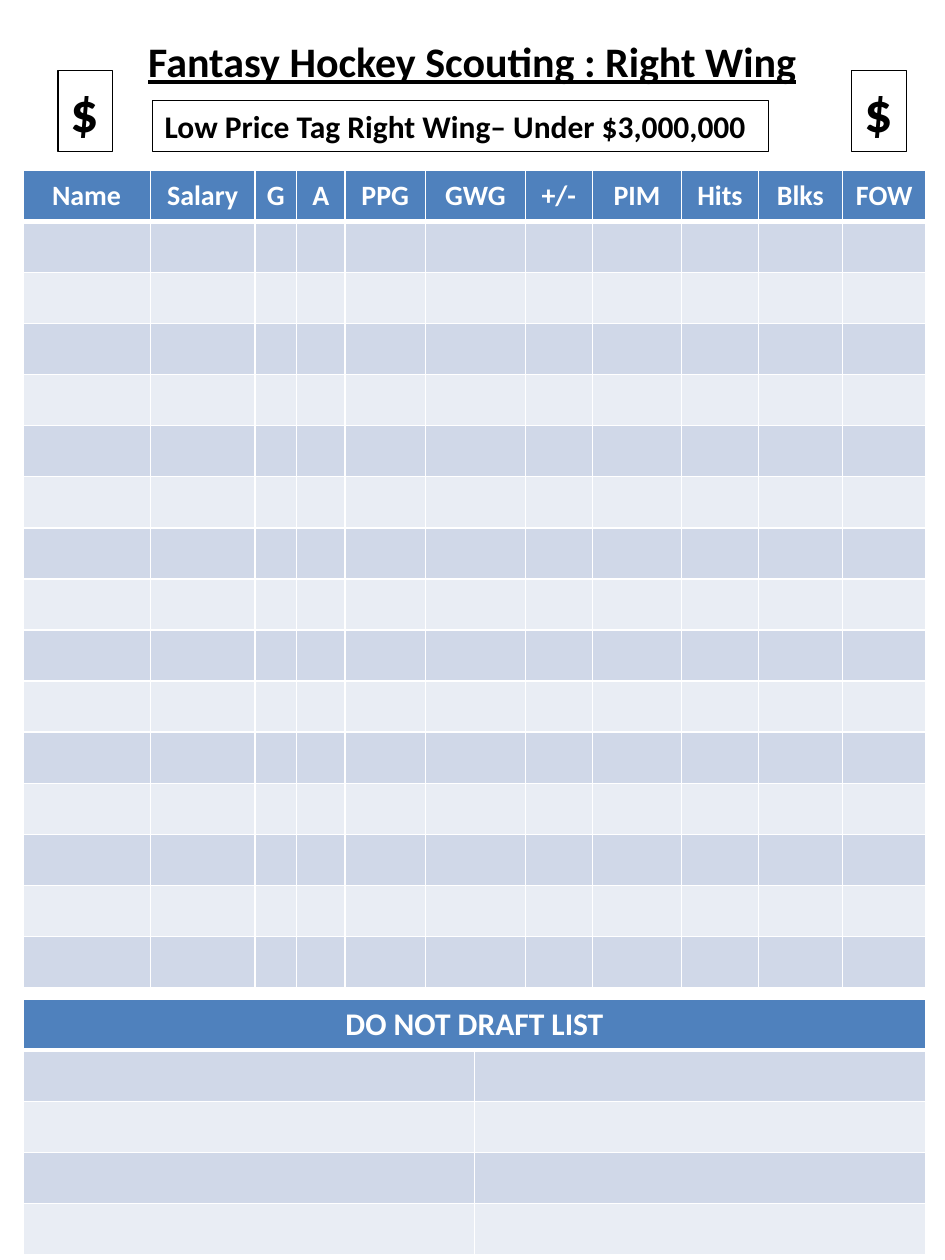
from lxml import etree
from pptx import Presentation, util as u
from pptx.dml.color import RGBColor
from pptx.enum import text
from pptx.oxml import ns

COLORS = {"ink": "000000", "white": "FFFFFF", "header": "4F81BD",
          "dark_band": "D0D8E8", "light_band": "E9EDF4"}
STATS = {"Name": 2.57, "Salary": 2.11, "G": 0.84, "A": 0.97, "PPG": 1.63, "GWG": 2.01,
         "+/-": 1.35, "PIM": 1.8, "Hits": 1.55, "Blks": 1.69, "FOW": 1.69}
ROW_HEIGHT = 1.03


def color(name):
    """Return the named palette colour."""
    return RGBColor.from_string(COLORS[name])


def write(frame, words, size=18, ink="ink", align=text.PP_ALIGN.LEFT, underline=None,
          anchor=text.MSO_ANCHOR.TOP, wrap=True):
    """Put one bold formatted line into a text frame."""
    frame.word_wrap = wrap
    frame.auto_size = text.MSO_AUTO_SIZE.NONE
    frame.vertical_anchor = anchor
    line = frame.paragraphs[0]
    line.alignment = align
    run = line.add_run()
    run.text = words
    font = run.font
    font.name, font.size, font.bold, font.underline = "Calibri", u.Pt(size), True, underline
    font.color.rgb = color(ink)


def style_cell(cell, fill, bottom=1):
    """Fill a cell and give it white borders."""
    properties = cell._tc.get_or_add_tcPr()
    for side, width in (("L", 1), ("R", 1), ("T", 1), ("B", bottom)):
        border = etree.SubElement(properties, ns.qn(f"a:ln{side}"), w=str(u.Pt(width)))
        solid = etree.SubElement(border, ns.qn("a:solidFill"))
        etree.SubElement(solid, ns.qn("a:srgbClr"), val=COLORS["white"])
    cell.fill.solid()
    cell.fill.fore_color.rgb = color(fill)


def add_banded_table(slide, left, top, widths, row_count):
    """Add a table with a header row and alternating bands."""
    table = slide.shapes.add_table(row_count, len(widths), u.Cm(left), u.Cm(top),
                                   u.Cm(sum(widths)), u.Cm(ROW_HEIGHT * row_count)).table
    for column, width in zip(table.columns, widths):
        column.width = u.Cm(width)
    for index, row in enumerate(table.rows):
        row.height = u.Cm(ROW_HEIGHT)
        band = "dark_band" if index % 2 else "light_band"
        for cell in row.cells:
            cell.margin_left = cell.margin_right = u.Cm(0.1)
            style_cell(cell, band if index else "header", 1 if index else 3)
    return table


def write_header(cell, words, size):
    """Write a centred white table heading."""
    write(cell.text_frame, words, size, "white", text.PP_ALIGN.CENTER)
    cell.vertical_anchor = text.MSO_ANCHOR.MIDDLE


def add_outlined_box(slide, left, top, width, height, words, **style):
    """Add a text box with a thin black outline."""
    box = slide.shapes.add_textbox(u.Cm(left), u.Cm(top), u.Cm(width), u.Cm(height))
    box.line.color.rgb = color("ink")
    box.line.width = u.Pt(0.75)
    write(box.text_frame, words, **style)


def add_heading(slide, left, top, width):
    """Place the title, the price tag and a dollar sign on each side."""
    title = slide.shapes.title
    title.left, title.top = u.Cm(left + 0.25), u.Cm(top)
    title.width, title.height = u.Cm(width - 0.5), u.Cm(1.52)
    write(title.text_frame, "Fantasy Hockey Scouting : Right Wing", size=24,
          align=text.PP_ALIGN.CENTER, underline=True, anchor=text.MSO_ANCHOR.MIDDLE)
    add_outlined_box(slide, left + 1.9, top + 1.57, 12.42, 1.02,
                     "Low Price Tag Right Wing– Under $3,000,000")
    for sign_left in (left, left + width - 0.7):
        add_outlined_box(slide, sign_left, top + 0.96, 1.1, 1.63, "$", size=32, wrap=False)


def add_scouting_table(slide, left, top):
    """Place the empty player statistics sheet."""
    table = add_banded_table(slide, left, top, list(STATS.values()), 16)
    for cell, stat in zip(table.rows[0].cells, STATS):
        write_header(cell, stat, 16)


def add_do_not_draft_list(slide, left, top, width):
    """Place the two-column list of players to avoid."""
    table = add_banded_table(slide, left, top, [width / 2] * 2, 5)
    table.cell(0, 0).merge(table.cell(0, 1))
    write_header(table.cell(0, 0), "DO NOT DRAFT LIST", 18)


def main():
    """Build the scouting sheet."""
    deck = Presentation()
    deck.slide_width, deck.slide_height = u.Cm(19.05), u.Cm(25.4)
    slide = deck.slides.add_slide(deck.slide_layouts[0])
    subtitle = slide.placeholders[1].element
    subtitle.getparent().remove(subtitle)
    add_heading(slide, 1.17, 0.46, 16.7)
    add_scouting_table(slide, 0.46, 3.43)
    add_do_not_draft_list(slide, 0.46, 20.14, sum(STATS.values()))
    deck.save("out.pptx")


if __name__ == "__main__":
    main()
